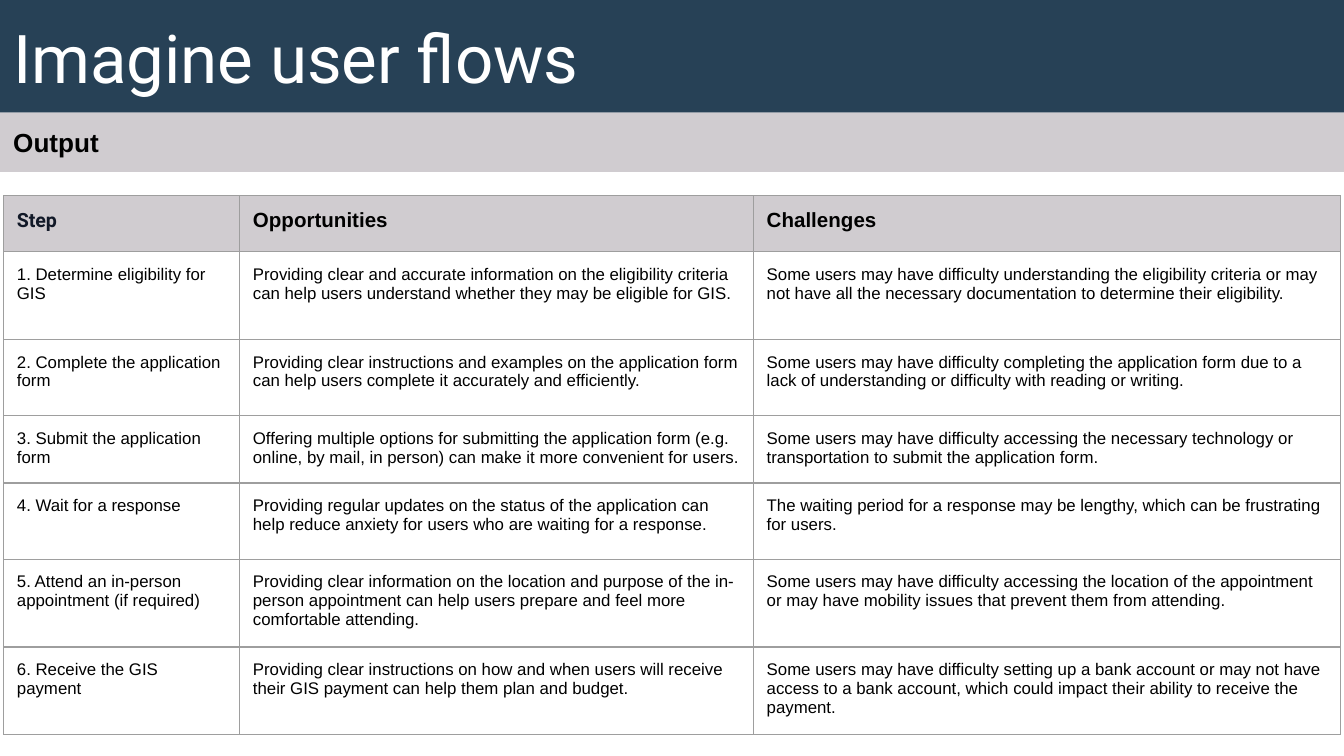
from dataclasses import dataclass

import lxml.etree
import pptx
import pptx.dml.color
import pptx.enum.shapes
import pptx.enum.text
import pptx.oxml.ns
import pptx.util

Cm = pptx.util.Cm
Pt = pptx.util.Pt


@dataclass(frozen=True)
class Theme:
    navy: str = "274156"
    band: str = "D0CCD0"
    border: str = "9E9E9E"
    white: str = "FFFFFF"
    black: str = "000000"
    ink: str = "111827"
    title_size: float = 36
    subtitle_size: float = 14
    heading_size: float = 11
    step_size: float = 10.5
    body_size: float = 9
    border_width: float = 0.75


theme = Theme()
rgb = pptx.dml.color.RGBColor.from_string
qn = pptx.oxml.ns.qn


def write(frame, text, *, size, color=theme.black, font="Arial", bold=False):
    """Fill a text frame with one left-aligned paragraph."""
    para = frame.paragraphs[0]
    para.alignment = pptx.enum.text.PP_ALIGN.LEFT
    span = para.add_run()
    span.text = text
    span.font.name = font
    span.font.size = Pt(size)
    span.font.bold = bold
    span.font.color.rgb = rgb(color)


def add_borders(cell):
    properties = cell._tc.get_or_add_tcPr()
    for side in ("lnL", "lnR", "lnT", "lnB"):
        line = lxml.etree.SubElement(properties, qn(f"a:{side}"), w=str(Pt(theme.border_width)))
        fill = lxml.etree.SubElement(line, qn("a:solidFill"))
        lxml.etree.SubElement(fill, qn("a:srgbClr"), val=theme.border)


deck = pptx.Presentation()
deck.slide_width = Cm(25.4)
deck.slide_height = Cm(14.29)
page = deck.slides.add_slide(deck.slide_layouts[0])
subtitle = page.placeholders[1]
subtitle.element.getparent().remove(subtitle.element)

# Title and subtitle bands
title = page.shapes.title
title.left, title.top, title.width, title.height = Cm(0), Cm(0), Cm(25.4), Cm(2.13)
output_band = page.shapes.add_shape(
    pptx.enum.shapes.MSO_SHAPE.RECTANGLE, Cm(0), Cm(2.13), Cm(25.4), Cm(1.12)
)
output_band.shadow.inherit = False
output_band.line.fill.background()

for box, color in ((title, theme.navy), (output_band, theme.band)):
    box.fill.solid()
    box.fill.fore_color.rgb = rgb(color)
    frame = box.text_frame
    frame.word_wrap = True
    frame.auto_size = pptx.enum.text.MSO_AUTO_SIZE.NONE
    frame.vertical_anchor = pptx.enum.text.MSO_ANCHOR.MIDDLE
    frame.margin_left = frame.margin_right = Cm(0.25)
    frame.margin_top = frame.margin_bottom = Cm(0.25)

write(title.text_frame, "Imagine user flows", size=theme.title_size,
      color=theme.white, font="Roboto")
write(output_band.text_frame, "Output", size=theme.subtitle_size, bold=True)

# Table of steps
rows = [
    ("Step", "Opportunities", "Challenges"),
    ("1. Determine eligibility for GIS",
     "Providing clear and accurate information on the eligibility criteria can help users "
     "understand whether they may be eligible for GIS.",
     "Some users may have difficulty understanding the eligibility criteria or may not have "
     "all the necessary documentation to determine their eligibility."),
    ("2. Complete the application form",
     "Providing clear instructions and examples on the application form can help users "
     "complete it accurately and efficiently.",
     "Some users may have difficulty completing the application form due to a lack of "
     "understanding or difficulty with reading or writing."),
    ("3. Submit the application form",
     "Offering multiple options for submitting the application form (e.g. online, by mail, "
     "in person) can make it more convenient for users.",
     "Some users may have difficulty accessing the necessary technology or transportation "
     "to submit the application form."),
    ("4. Wait for a response",
     "Providing regular updates on the status of the application can help reduce anxiety "
     "for users who are waiting for a response.",
     "The waiting period for a response may be lengthy, which can be frustrating for users."),
    ("5. Attend an in-person appointment (if required)",
     "Providing clear information on the location and purpose of the in-person appointment "
     "can help users prepare and feel more comfortable attending.",
     "Some users may have difficulty accessing the location of the appointment or may have "
     "mobility issues that prevent them from attending."),
    ("6. Receive the GIS payment",
     "Providing clear instructions on how and when users will receive their GIS payment can "
     "help them plan and budget.",
     "Some users may have difficulty setting up a bank account or may not have access to a "
     "bank account, which could impact their ability to receive the payment."),
]
column_widths = (4.46, 9.71, 11.09)
row_heights = (1.06, 1.66, 1.44, 1.27, 1.44, 1.66, 1.65)

table = page.shapes.add_table(
    len(rows), len(column_widths), Cm(0.07), Cm(3.7),
    Cm(sum(column_widths)), Cm(sum(row_heights)),
).table
table.first_row = False
table.horz_banding = False
for column, width in zip(table.columns, column_widths):
    column.width = Cm(width)

heading = dict(size=theme.heading_size, bold=True)
step_heading = dict(size=theme.step_size, bold=True, color=theme.ink, font="Roboto")
body = dict(size=theme.body_size)

for row_index, (texts, height) in enumerate(zip(rows, row_heights)):
    table.rows[row_index].height = Cm(height)
    for column_index, text in enumerate(texts):
        cell = table.cell(row_index, column_index)
        cell.margin_left = cell.margin_right = Cm(0.25)
        cell.margin_top = cell.margin_bottom = Cm(0.25)
        add_borders(cell)
        if row_index == 0:
            cell.fill.solid()
            cell.fill.fore_color.rgb = rgb(theme.band)
            style = heading if column_index else step_heading
        else:
            cell.fill.background()
            style = body
        write(cell.text_frame, text, **style)

deck.save("out.pptx")
